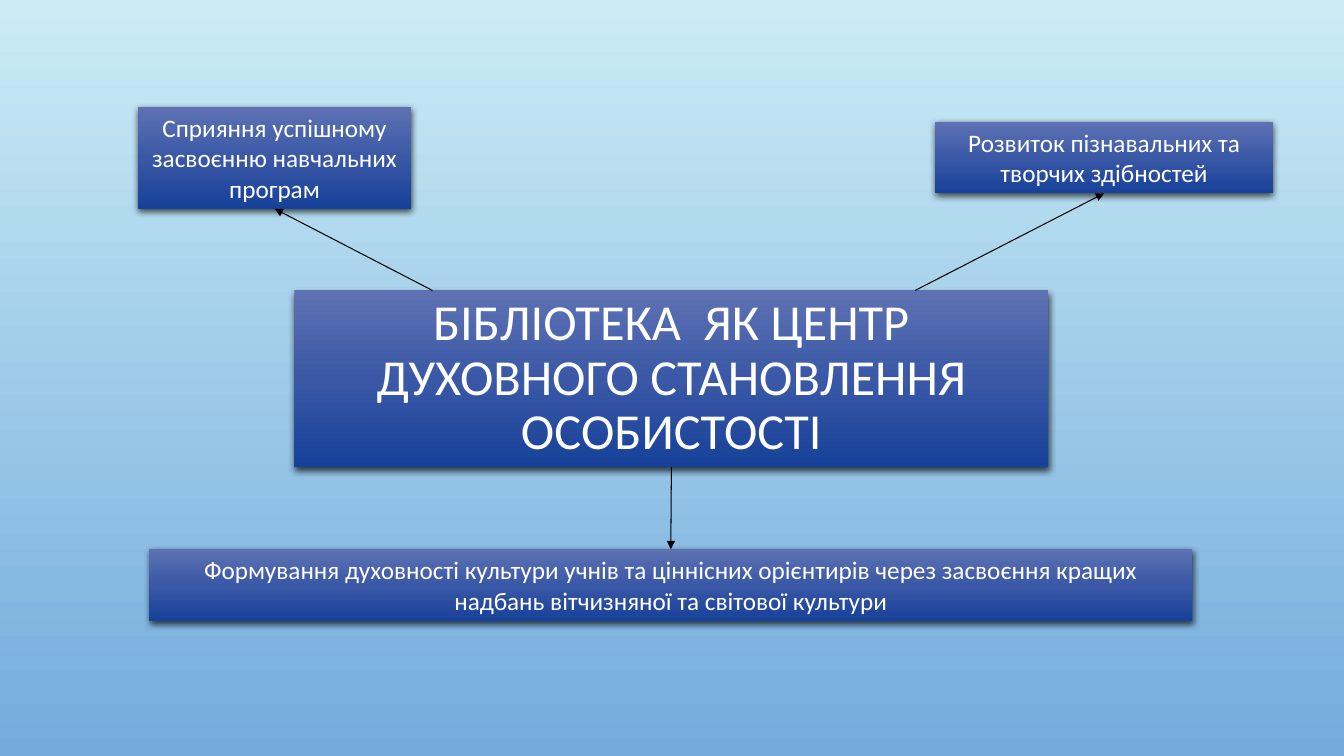
from copy import deepcopy

from lxml import etree
from pptx import Presentation
from pptx.dml.color import RGBColor
from pptx.enum.shapes import MSO_CONNECTOR, MSO_SHAPE
from pptx.enum.text import MSO_ANCHOR, PP_ALIGN
from pptx.oxml.ns import qn
from pptx.util import Cm, Pt

RECTANGLE = MSO_SHAPE.RECTANGLE
STRAIGHT = MSO_CONNECTOR.STRAIGHT
MIDDLE = MSO_ANCHOR.MIDDLE
CENTER = PP_ALIGN.CENTER
TOP_SITE, BOTTOM_SITE = 0, 2

COLORS = {
    "sky_top": "CBECF5", "sky_bottom": "73ABDD",
    "box_top": "5E72B3", "box_middle": "3A58A6", "box_bottom": "174199",
    "text": "FFFFFF", "arrow": "000000", "shadow": "000000",
}
FONT = "Calibri"

# Content: text, (left, top, width, height) in cm
CENTRAL_IDEA = ("БІБЛІОТЕКА  ЯК ЦЕНТР ДУХОВНОГО СТАНОВЛЕННЯ ОСОБИСТОСТІ",
                (7.42, 7.32, 19, 4.45))
# Goals add: x where the arrow leaves the central box, side of the goal it meets
GOALS = [
    ("Сприяння успішному засвоєнню навчальних програм",
     (3.48, 2.69, 6.88, 2.57), 10.9, BOTTOM_SITE),
    ("Розвиток пізнавальних та творчих здібностей",
     (23.57, 3.07, 8.51, 1.8), 23.06, BOTTOM_SITE),
    ("Формування духовності культури учнів та ціннісних орієнтирів через "
     "засвоєння кращих надбань вітчизняної та світової культури",
     (3.76, 13.84, 26.29, 1.8), 16.92, TOP_SITE),
]


def rgb(name):
    return RGBColor.from_string(COLORS[name])


def fill_downward(fill, top, bottom):
    fill.gradient()
    fill.gradient_angle = 270
    for stop, name in zip(fill.gradient_stops, (top, bottom)):
        stop.color.rgb = rgb(name)


def add_box(slide, text, frame, size, line_spacing=1.0):
    box = slide.shapes.add_shape(RECTANGLE, *map(Cm, frame))
    box.line.fill.background()

    # Three-stop gradient
    fill_downward(box.fill, "box_top", "box_bottom")
    properties = box._element.spPr
    first_stop = properties.find(".//" + qn("a:gs"))
    middle_stop = deepcopy(first_stop)
    middle_stop.set("pos", "50000")
    middle_stop[0].set("val", COLORS["box_middle"])
    first_stop.addnext(middle_stop)

    # Soft shadow below
    box.shadow.inherit = False
    effects = properties.find(qn("a:effectLst"))
    shadow = etree.SubElement(effects, qn("a:outerShdw"), blurRad=str(Pt(5)),
                              dist=str(Pt(2)), dir="5400000", rotWithShape="0")
    color = etree.SubElement(shadow, qn("a:srgbClr"), val=COLORS["shadow"])
    etree.SubElement(color, qn("a:alpha"), val="69000")

    # Text
    box.text_frame.word_wrap = True
    box.text_frame.vertical_anchor = MIDDLE
    paragraph = box.text_frame.paragraphs[0]
    paragraph.alignment = CENTER
    paragraph.line_spacing = line_spacing
    run = paragraph.add_run()
    run.text = text
    run.font.name = FONT
    run.font.size = Pt(size)
    run.font.color.rgb = rgb("text")
    return box


def add_arrow(slide, start_x, start_y, goal, site):
    arrow = slide.shapes.add_connector(STRAIGHT, start_x, start_y, start_x, start_y)
    arrow.end_connect(goal, site)
    arrow.line.color.rgb = rgb("arrow")
    arrow.line.width = Pt(0.75)
    etree.SubElement(arrow.line._get_or_add_ln(), qn("a:tailEnd"), type="triangle")
    etree.SubElement(arrow._element.spPr, qn("a:effectLst"))


def main():
    presentation = Presentation()
    presentation.slide_width = Cm(33.87)
    presentation.slide_height = Cm(19.05)
    slide = presentation.slides.add_slide(presentation.slide_layouts[6])
    fill_downward(slide.background.fill, "sky_top", "sky_bottom")

    # Boxes
    central = add_box(slide, *CENTRAL_IDEA, size=36, line_spacing=0.9)
    goals = [add_box(slide, text, frame, size=18) for text, frame, _, _ in GOALS]

    # Arrows from the central box to each goal
    for goal, (_, _, start_x, site) in zip(goals, GOALS):
        start_y = central.top + (central.height if site == TOP_SITE else 0)
        add_arrow(slide, Cm(start_x), start_y, goal, site)

    presentation.save("out.pptx")


if __name__ == "__main__":
    main()
